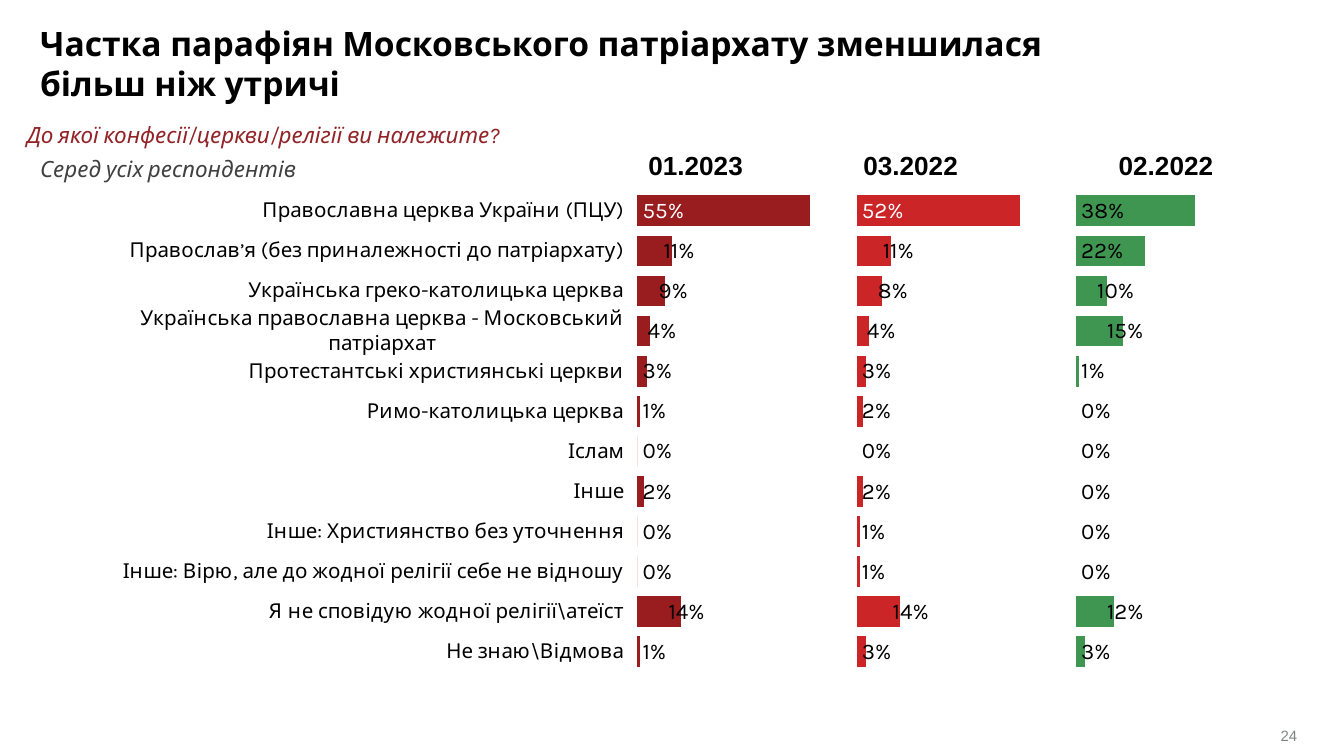
import pptx
import pptx.chart.data
import pptx.dml.color
import pptx.enum.chart
import pptx.enum.text
import pptx.oxml
import pptx.oxml.ns
import pptx.util

Pt = pptx.util.Pt
ALIGN = pptx.enum.text.PP_ALIGN
COLORS = {"black": "000000", "white": "FFFFFF", "gray": "404040", "page": "808585",
          "question": "922428", "maroon": "991C1E", "red": "CB2528", "green": "3E9651"}
PERCENT = "###0%"


def style(font, size, color, name="Karla", bold=None, italic=None):
    font.size, font.name, font.bold, font.italic = Pt(size), name, bold, italic
    font.color.rgb = pptx.dml.color.RGBColor.from_string(COLORS[color])


def manual_layout(**settings):
    """Return a c:layout element with the given settings in schema order."""
    body = "".join(f'<c:{key} val="{value}"/>' for key, value in settings.items())
    return pptx.oxml.parse_xml(f"<c:layout {pptx.oxml.ns.nsdecls('c')}>"
                               f"<c:manualLayout>{body}</c:manualLayout></c:layout>")


deck = pptx.Presentation()
deck.slide_width, deck.slide_height = Pt(720), Pt(405)
slide = deck.slides.add_slide(deck.slide_layouts[6])

# Headings and page number: text, box, margins (x, y), alignment, font
texts = [
    ("24", (592.5, 389.5, 102.5, 11.5), (0, 0), ALIGN.RIGHT, (8, "page", "Arial")),
    ("До якої конфесії/церкви/релігії ви належите?", (14.4, 65, 595, 14.4), (0, 0),
     ALIGN.LEFT, (12, "question", "Karla", None, True)),
    ("Серед усіх респондентів", (14.4, 79.5, 198.5, 21.6), (7.2, 3.6),
     ALIGN.LEFT, (12, "gray", "Karla", None, True)),
    ("Частка парафіян Московського патріархату зменшилася більш ніж утричі",
     (14.4, 8.6, 572.5, 51), (7.2, 3.6), ALIGN.LEFT, (18, "black", "Karla", True)),
]
for text, box, (margin_x, margin_y), alignment, font in texts:
    frame = slide.shapes.add_textbox(*map(Pt, box)).text_frame
    frame.word_wrap = True
    frame.margin_left = frame.margin_right = Pt(margin_x)
    frame.margin_top = frame.margin_bottom = Pt(margin_y)
    line = frame.paragraphs[0]
    line.text, line.alignment = text, alignment
    style(line.font, *font)

# Survey dates above the bars
dates = slide.shapes.add_table(1, 3, Pt(311.8), Pt(74.2), Pt(395.3), Pt(29.5)).table
dates.first_row = dates.horz_banding = False
for index, (date, width) in enumerate([("01.2023", 121.7), ("03.2022", 108.7), ("02.2022", 164.9)]):
    dates.columns[index].width = Pt(width)
    cell = dates.cell(0, index)
    cell.fill.background()
    cell.vertical_anchor = pptx.enum.text.MSO_ANCHOR.MIDDLE
    cell.text = date
    heading = cell.text_frame.paragraphs[0]
    heading.alignment = ALIGN.CENTER
    style(heading.font, 14, "black", "Arial", True)

# Each survey gets an equal lane: its share, then an unfilled rest of the lane.
# Labels of short bars move right by a fraction of the chart width.
LANE = 0.7
surveys = [
    ("maroon", [0.55, 0.11, 0.09, 0.04, 0.03, 0.01, 0, 0.02, 0, 0, 0.14, 0.01],
     {1: 0.017, 2: 0.013, 3: 0.004, 10: 0.021}),
    ("red", [0.52, 0.11, 0.08, 0.04, 0.03, 0.02, 0, 0.02, 0.01, 0.01, 0.14, 0.03],
     {1: 0.017, 2: 0.013, 3: 0.004, 10: 0.025}),
    ("green", [0.38, 0.22, 0.1, 0.15, 0.01, 0, 0, 0, 0, 0, 0.12, 0.03],
     {2: 0.013, 3: 0.021, 10: 0.021}),
]
shares = pptx.chart.data.CategoryChartData(number_format=PERCENT)
shares.categories = [
    "Православна церква України (ПЦУ)",
    "Православ’я (без приналежності до патріархату)",
    "Українська греко-католицька церква",
    "Українська православна церква - Московський патріархат",
    "Протестантські християнські церкви",
    "Римо-католицька церква",
    "Іслам",
    "Інше",
    "Інше: Християнство без уточнення",
    "Інше: Вірю, але до жодної релігії себе не відношу",
    "Я не сповідую жодної релігії\\атеїст",
    "Не знаю\\Відмова",
]
for number, (color, values, shifts) in enumerate(surveys):
    shares.add_series(f"Series {2 * number + 1}", values)
    shares.add_series(f"Series {2 * number + 2}", [round(LANE - value, 2) for value in values])

chart = slide.shapes.add_chart(pptx.enum.chart.XL_CHART_TYPE.BAR_STACKED_100,
                               Pt(33.8), Pt(95), Pt(660.2), Pt(270), shares).chart
chart.has_legend = chart.has_title = False
style(chart.font, 11, "black", "Arial")

churches = chart.category_axis
churches.reverse_order = True
churches.has_major_gridlines = False
churches.format.line.fill.background()
style(churches.tick_labels.font, 11, "black")
scale = chart.value_axis
scale.has_major_gridlines = False
scale.minimum_scale, scale.maximum_scale = 0, 1
scale.visible = False

bars = chart.plots[0]
bars.gap_width, bars.overlap = 30, 100
bars.vary_by_categories = False
INSIDE_BASE = pptx.enum.chart.XL_LABEL_POSITION.INSIDE_BASE
for number, (color, values, shifts) in enumerate(surveys):
    share, rest = bars.series[2 * number], bars.series[2 * number + 1]
    rest.format.fill.background()
    share.format.fill.solid()
    share.format.fill.fore_color.rgb = pptx.dml.color.RGBColor.from_string(COLORS[color])
    labels = share.data_labels
    labels.show_value = True
    labels.position = INSIDE_BASE
    labels.number_format, labels.number_format_is_linked = PERCENT, False
    style(labels.font, 12, "black")
    if color != "green":
        top_label = share.points[0].data_label
        style(top_label.font, 12, "white")
        top_label.position = INSIDE_BASE
    for point, shift in shifts.items():
        label = share.points[point].data_label
        style(label.font, 12, "black")
        label.position = INSIDE_BASE
        label._get_or_add_dLbl().insert(1, manual_layout(x=shift, y=0))

# Shifted labels need no leader lines
for leader_lines in chart._chartSpace.iter(pptx.oxml.ns.qn("c:showLeaderLines")):
    leader_lines.set("val", "0")

plot_area = chart._chartSpace.chart.plotArea
for old_layout in plot_area.findall(pptx.oxml.ns.qn("c:layout")):
    plot_area.remove(old_layout)
plot_area.insert(0, manual_layout(layoutTarget="inner", xMode="edge", yMode="edge",
                                  x=0.466, y=0.027, w=0.534, h=0.954))

deck.save("out.pptx")
